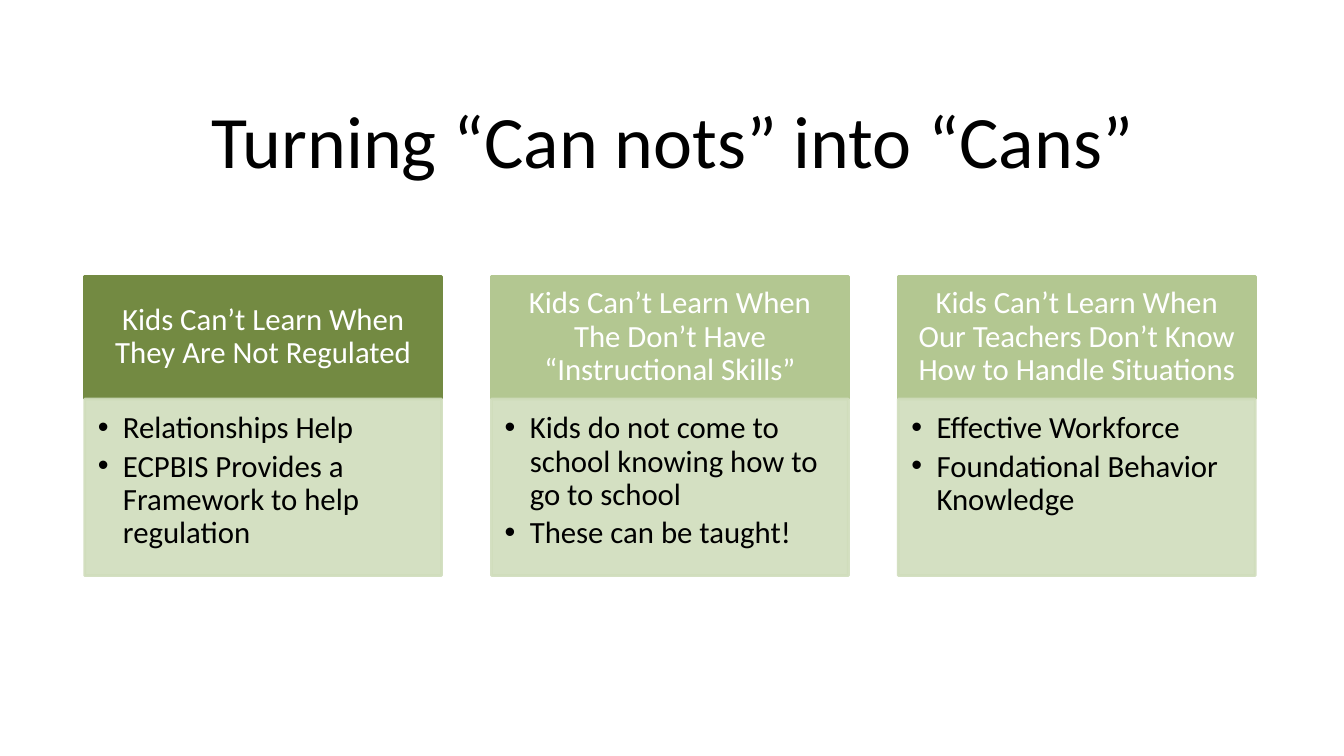
import pptx
import pptx.util
import pptx.dml.color
import pptx.enum.shapes
import pptx.enum.text
import pptx.oxml
import pptx.oxml.ns
from lxml import etree

Inches = pptx.util.Inches
Pt = pptx.util.Pt
RGBColor = pptx.dml.color.RGBColor
ALIGN = pptx.enum.text.PP_ALIGN
ANCHOR = pptx.enum.text.MSO_ANCHOR
qn = pptx.oxml.ns.qn

BLACK = RGBColor(0x00, 0x00, 0x00)
WHITE = RGBColor(0xFF, 0xFF, 0xFF)
DARK = RGBColor(0x73, 0x8A, 0x42)
LIGHT = RGBColor(0xB3, 0xC7, 0x91)
PALE = RGBColor(0xD0, 0xDD, 0xBC)

LEFT, STEP, WIDTH = 0.84, 4.035, 3.54
CARDS = [
    (DARK, "Kids Can’t Learn When They Are Not Regulated",
     ["Relationships Help", "ECPBIS Provides a Framework to help regulation"]),
    (LIGHT, "Kids Can’t Learn When The Don’t Have “Instructional Skills”",
     ["Kids do not come to school knowing how to go to school",
      "These can be taught!"]),
    (LIGHT, "Kids Can’t Learn When Our Teachers Don’t Know How to Handle Situations",
     ["Effective Workforce", "Foundational Behavior Knowledge"]),
]


def add_box(left, top, height, color, insets, anchor):
    box = slide.shapes.add_shape(
        pptx.enum.shapes.MSO_SHAPE.RECTANGLE,
        Inches(left), Inches(top), Inches(WIDTH), Inches(height))
    box.shadow.inherit = False
    box.fill.solid()
    box.fill.fore_color.rgb = color
    box.line.color.rgb = color
    box.line.width = Pt(2)
    frame = box.text_frame
    frame.word_wrap = True
    frame.vertical_anchor = anchor
    (frame.margin_left, frame.margin_top,
     frame.margin_right, frame.margin_bottom) = map(Inches, insets)
    return box


def style(para, size, color, align):
    para.alignment = align
    para.line_spacing = 0.9
    para.font.name = "Calibri"
    para.font.size = Pt(size)
    para.font.color.rgb = color


deck = pptx.Presentation()
deck.slide_width = Inches(13.33)
deck.slide_height = Inches(7.5)
slide = deck.slides.add_slide(deck.slide_layouts[6])

title = slide.shapes.add_textbox(Inches(0.67), Inches(0.75), Inches(12), Inches(1.25))
title.text_frame.word_wrap = True
title.text_frame.vertical_anchor = ANCHOR.MIDDLE
title.text_frame.text = "Turning “Can nots” into “Cans”"
para = title.text_frame.paragraphs[0]
style(para, 52.8, BLACK, ALIGN.CENTER)
para.line_spacing = 1.0

for index, (color, heading, points) in enumerate(CARDS):
    left = LEFT + index * STEP

    head = add_box(left, 2.74, 1.21, color, (0.17, 0.1, 0.17, 0.1), ANCHOR.MIDDLE)
    head.text_frame.text = heading
    style(head.text_frame.paragraphs[0], 22, WHITE, ALIGN.CENTER)

    body = add_box(left, 3.96, 1.75, PALE, (0.13, 0.13, 0.17, 0.19), ANCHOR.TOP)
    # Fill and outline are both 90% opaque
    for tint in body.fill._xPr.iter(qn("a:srgbClr")):
        etree.SubElement(tint, qn("a:alpha")).set("val", "90000")

    body.text_frame.text = "\n".join(points)
    for para in body.text_frame.paragraphs:
        props = para._p.get_or_add_pPr()
        props.set("marL", str(Inches(0.25)))
        props.set("indent", str(-Inches(0.25)))
        etree.SubElement(props, qn("a:buFont")).set("typeface", "Arial")
        etree.SubElement(props, qn("a:buChar")).set("char", "•")
        para.level = 1
        para.space_after = Pt(3.6)
        style(para, 22, BLACK, ALIGN.LEFT)

deck.save("out.pptx")
